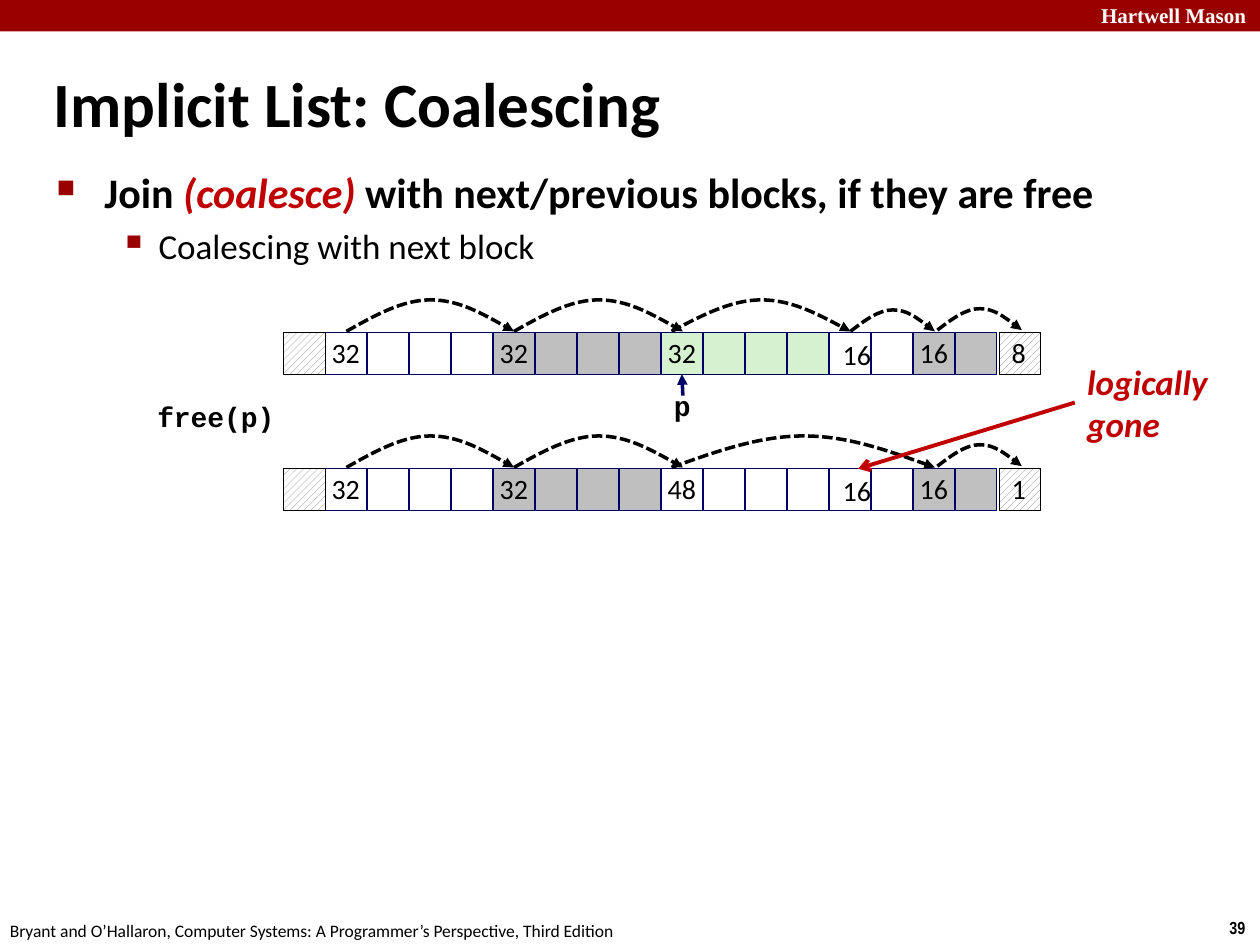
from dataclasses import dataclass
from lxml.etree import SubElement
from pptx import Presentation
from pptx.dml.color import RGBColor
from pptx.enum.dml import MSO_LINE, MSO_PATTERN
from pptx.enum.shapes import MSO_CONNECTOR, MSO_SHAPE
from pptx.enum.text import MSO_ANCHOR, PP_ALIGN
from pptx.oxml.ns import qn
from pptx.util import Inches, Pt

RECT = MSO_SHAPE.RECTANGLE
LINE = MSO_CONNECTOR.STRAIGHT
DASH = MSO_LINE.SQUARE_DOT
HATCH = MSO_PATTERN.WIDE_UPWARD_DIAGONAL
MID = MSO_ANCHOR.MIDDLE
TOP = MSO_ANCHOR.TOP
LEFT = PP_ALIGN.LEFT
CENTER = PP_ALIGN.CENTER

CELL = 0.33
STEP = 1 / 3
START = 2.58


def font(name, size, color, bold=False, italic=False):
    return dict(name=name, size=Pt(size), color=color, bold=bold, italic=italic)


@dataclass(frozen=True)
class Theme:
    black = "000000"
    white = "FFFFFF"
    band = "990000"
    red = "C00000"
    navy = "000066"
    gray = "BFBFBF"
    silver = "C0C0C0"
    green = "D5F1CF"
    shade = "808080"
    school = font("Times New Roman", 12, white, True)
    page = font("Arial Narrow", 10, black, True)
    foot = font("Calibri", 10, black)
    title = font("Calibri", 36, black, True)
    point = font("Calibri", 24, black, True)
    term = font("Calibri", 24, red, True, True)
    sub = font("Calibri", 20, black)
    num = font("Calibri", 16, black)
    code = font("Courier New", 16, black, True)
    note = font("Calibri", 20, red, True, True)


def rgb(code):
    return RGBColor.from_string(code)


def style(item, values):
    for key, value in values.items():
        if key == "color":
            item.color.rgb = rgb(value)
        else:
            setattr(item, key, value)


class Painter:
    def __init__(self, theme, slide):
        self.theme = theme
        self.shapes = slide.shapes

    def words(self, frame, paras, anchor=TOP, wrap=False, **form):
        style(frame, dict(word_wrap=wrap, vertical_anchor=anchor))
        for i, runs in enumerate(paras):
            para = frame.add_paragraph() if i else frame.paragraphs[0]
            style(para, dict(dict(alignment=LEFT), **form))
            for label, look in runs:
                run = para.add_run()
                run.text = label
                style(run.font, look)

    def text(self, at, paras, **form):
        box = self.shapes.add_textbox(*map(Inches, at))
        self.words(box.text_frame, paras, **form)
        return box

    def bullet(self, para, mark, size, left, hang, **form):
        style(para, form)
        props = para._p.get_or_add_pPr()
        props.set("marL", str(Inches(left)))
        props.set("indent", str(-Inches(hang)))
        tint = SubElement(props, qn("a:buClr"))
        SubElement(tint, qn("a:srgbClr"), val=self.theme.band)
        SubElement(props, qn("a:buSzPct"), val=str(size * 1000))
        SubElement(props, qn("a:buChar"), char=mark)

    def rect(self, at, fill, edge=None, hatch=False):
        box = self.shapes.add_shape(RECT, *map(Inches, at))
        box.shadow.inherit = False
        if hatch:
            box.fill.patterned()
            box.fill.pattern = HATCH
            box.fill.fore_color.rgb = rgb(self.theme.shade)
            box.fill.back_color.rgb = rgb(fill)
        else:
            box.fill.solid()
            box.fill.fore_color.rgb = rgb(fill)
        if edge:
            box.line.color.rgb = rgb(edge)
            box.line.width = Pt(0.25)
        else:
            box.line.fill.background()
        return box

    def cell(self, x, y, fill, label="", edge=None, hatch=False, align=CENTER):
        box = self.rect((x, y, CELL, CELL), fill, edge or self.theme.navy, hatch)
        if label:
            self.words(box.text_frame, [[(label, self.theme.num)]],
                       anchor=MID, alignment=align, line_spacing=0.98)
        return box

    def stroke(self, item, color, width, tip):
        item.line.color.rgb = rgb(color)
        item.line.width = Pt(width)
        props = item._element.spPr
        SubElement(props.find(qn("a:ln")), qn("a:tailEnd"), type=tip)
        SubElement(props, qn("a:effectLst"))

    def arrow(self, start, end, color, width, tip):
        item = self.shapes.add_connector(LINE, *map(Inches, start + end))
        self.stroke(item, color, width, tip)
        return item

    def arc(self, x1, x2, base, rise):
        lifts = (0, 0.5, 1, 1, 1, 0.5, 0)
        dots = [(Inches(x1 + (x2 - x1) * i / 6), Inches(base - rise * lift))
                for i, lift in enumerate(lifts)]
        draft = self.shapes.build_freeform(*dots[0])
        draft.add_line_segments(dots[1:], close=False)
        item = draft.convert_to_shape()
        item.fill.background()
        item.line.dash_style = DASH
        self.stroke(item, self.theme.black, 2, "triangle")
        legs = list(item._element.iter(qn("a:lnTo")))
        route = legs[0].getparent()
        for i in range(0, len(legs), 3):
            curve = SubElement(route, qn("a:cubicBezTo"))
            for leg in legs[i:i + 3]:
                curve.append(leg[0])
                route.remove(leg)

    def row(self, y, blocks, last, arcs):
        look = self.theme
        cells = []
        for label, count, fill in blocks:
            for i in range(count):
                x = START + len(cells) * STEP
                cells.append(self.cell(x, y, fill, "" if i else label))
        self.text((6.59, y, 0.43, 0.37), [[("16", look.num)]], line_spacing=0.98)
        for x, label in ((2.25, ""), (7.93, last)):
            self.cell(x, y, look.white, label, look.black, True, LEFT)
        for x1, x2, rise in [(2.75, 4.08, 0.25), (4.08, 5.42, 0.25)] + arcs:
            self.arc(x1, x2, y - 0.01, rise)
        self.arc(7.44, 8.11, y - 0.02, 0.17)
        return cells


def main():
    deck = Presentation()
    deck.slide_width, deck.slide_height = Inches(10), Inches(7.5)
    look = Theme()
    art = Painter(look, deck.slides.add_slide(deck.slide_layouts[6]))

    art.rect((0, 0, 10, 0.25), look.band)
    art.text((8.64, -0.03, 1.43, 0.3), [[("Hartwell Mason", look.school)]])
    art.text((9.66, 7.23, 0.34, 0.27), [[("39", look.page)]])
    art.text((-0.02, 7.25, 5.08, 0.27), [[(
        "Bryant and O’Hallaron, Computer Systems: "
        "A Programmer’s Perspective, Third Edition", look.foot)]])
    art.text((0.33, 0.5, 7.4, 0.63), [[("Implicit List: Coalescing", look.title)]],
             anchor=MID, wrap=True)

    body = art.text((0.35, 1.34, 9.09, 6), [
        [("Join ", look.point), ("(coalesce) ", look.term),
         ("with next/previous blocks, if they are free", look.point)],
        [("Coalescing with next block", look.sub)]], wrap=True)
    head, sub = body.text_frame.paragraphs
    art.bullet(head, "■", 60, 0.38, 0.38, line_spacing=0.83, space_before=Pt(17.5))
    art.bullet(sub, "▪", 110, 0.81, 0.31, level=1, line_spacing=0.88,
               space_before=Pt(7.5))

    used = [("32", 4, look.white), ("32", 4, look.gray)]
    rest = [("", 2, look.white), ("16", 2, look.silver)]
    cells = art.row(2.64, used + [("32", 4, look.green)] + rest, "8",
                    [(5.33, 6.75, 0.25), (6.75, 7.42, 0.17)])
    art.row(3.72, used + [("48", 4, look.white)] + rest, "1",
            [(5.33, 7.42, 0.25)])

    art.text((1.15, 3.14, 1.14, 0.36), [[("free(p)", look.code)]], line_spacing=0.94)
    art.text((5.25, 3.06, 0.33, 0.36), [[("p", look.code)]], line_spacing=0.94)
    mark = art.arrow((5.42, 3.14), (5.42, 2.97), look.navy, 2, "triangle")
    mark.end_connect(cells[8], 2)

    note = art.text((8.53, 2.81, 1.16, 0.77),
                    [[("logically", look.note)], [("gone", look.note)]])
    link = art.arrow((8.53, 3.2), (6.81, 3.72), look.red, 2.25, "arrow")
    link.begin_connect(note, 1)

    deck.save("out.pptx")


if __name__ == "__main__":
    main()
